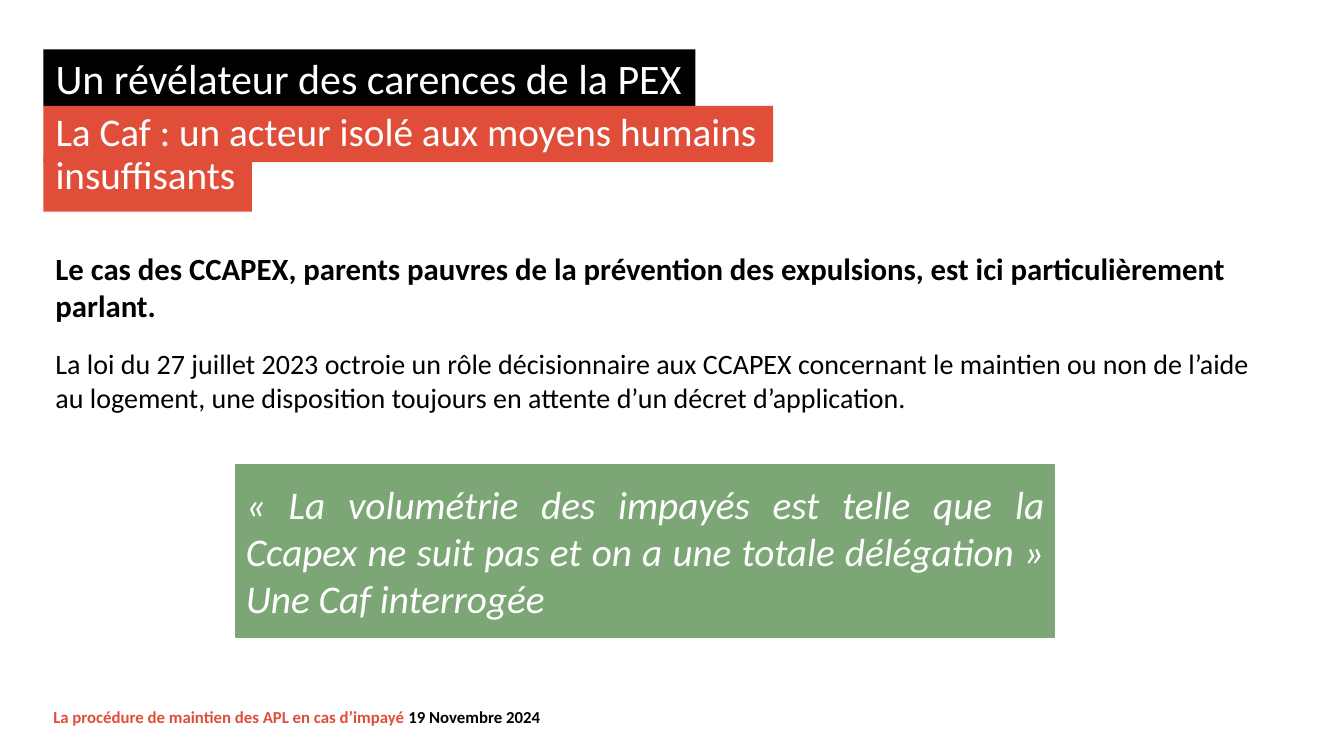
from pptx import Presentation
from pptx.dml.color import RGBColor
from pptx.enum.shapes import MSO_SHAPE
from pptx.enum.text import MSO_ANCHOR, MSO_AUTO_SIZE, PP_ALIGN
from pptx.util import Pt

RECT = MSO_SHAPE.RECTANGLE
TOP, MIDDLE = MSO_ANCHOR.TOP, MSO_ANCHOR.MIDDLE
LEFT, JUSTIFY = PP_ALIGN.LEFT, PP_ALIGN.JUSTIFY
NO_FIT = MSO_AUTO_SIZE.NONE

FONT = "Calibri"
BLACK, WHITE, RED, GREEN = "000000", "FFFFFF", "E04E39", "7CA676"
MARGIN = 31


def color(value):
    return RGBColor.from_string(value)


def add_bar(s, x, y, w, h, fill):
    sp = s.shapes.add_shape(RECT, Pt(x), Pt(y), Pt(w), Pt(h))
    sp.shadow.inherit = False
    sp.fill.solid()
    sp.fill.fore_color.rgb = color(fill)
    sp.line.fill.background()
    return sp


def write(sp, runs, size, bold=False, italic=False, align=LEFT,
          anchor=TOP, spacing=1.0, inset=(8.64, 4.32)):
    """Fill a shape with one paragraph made of (text, colour) runs."""
    tf = sp.text_frame
    tf.word_wrap = True
    tf.auto_size = NO_FIT
    tf.vertical_anchor = anchor
    tf.margin_left = tf.margin_right = Pt(inset[0])
    tf.margin_top = tf.margin_bottom = Pt(inset[1])
    p = tf.paragraphs[0]
    p.alignment = align
    p.line_spacing = spacing
    for text, value in runs:
        r = p.add_run()
        r.text = text
        r.font.name = FONT
        r.font.size = Pt(size)
        r.font.bold = bold
        r.font.italic = italic
        r.font.color.rgb = color(value)


def add_text(s, y, w, h, runs, size, **style):
    sp = s.shapes.add_textbox(Pt(MARGIN), Pt(y), Pt(w), Pt(h))
    write(sp, runs, size, **style)


def set_title(s, y, w, h, text, size):
    """Place the title in front of the bars drawn so far."""
    title = s.shapes.title
    title.left, title.top, title.width, title.height = (
        Pt(MARGIN), Pt(y), Pt(w), Pt(h))
    write(title, [(text, WHITE)], size, spacing=0.9)
    s.shapes._spTree.append(title._element)


def main():
    prs = Presentation()
    prs.slide_width, prs.slide_height = Pt(960), Pt(540)
    s = prs.slides.add_slide(prs.slide_layouts[5])

    add_bar(s, MARGIN, 112.3, 149, 38.9, RED)
    add_bar(s, MARGIN, 35.3, 465.8, 40.3, BLACK)
    set_title(s, 37.4, 712, 29.5, "Un révélateur des carences de la PEX", 30)
    add_bar(s, MARGIN, 75.6, 521.3, 40.3, RED)
    add_text(s, 76.3, 606.2, 29.5,
             [("La Caf : un acteur isolé aux moyens humains insuffisants", WHITE)],
             28, spacing=0.9)

    add_text(s, 174.2, 859.7, 60.5,
             [("Le cas des CCAPEX, parents pauvres de la prévention des "
               "expulsions, est ici particulièrement parlant.", BLACK)],
             22, bold=True)
    add_text(s, 243.4, 887.8, 110.2,
             [("La loi du 27 juillet 2023 octroie un rôle décisionnaire aux "
               "CCAPEX concernant le maintien ou non de l’aide au logement, une "
               "disposition toujours en attente d’un décret d’application.", BLACK)],
             20)

    quote = add_bar(s, 168.5, 331.9, 584.6, 123.1, GREEN)
    quote.line.color.rgb = color(GREEN)
    quote.line.width = Pt(1)
    write(quote,
          [("« La volumétrie des impayés est telle que la Ccapex ne suit pas et "
            "on a une totale délégation » Une Caf interrogée", WHITE)],
          28, italic=True, align=JUSTIFY, anchor=MIDDLE, inset=(7.2, 3.6))

    add_text(s, 501.1, 460, 21.6,
             [("La procédure de maintien des APL en cas d’impayé ", RED),
              ("19 Novembre 2024", BLACK)],
             12, bold=True, inset=(7.2, 3.6))

    prs.save("out.pptx")


if __name__ == "__main__":
    main()
